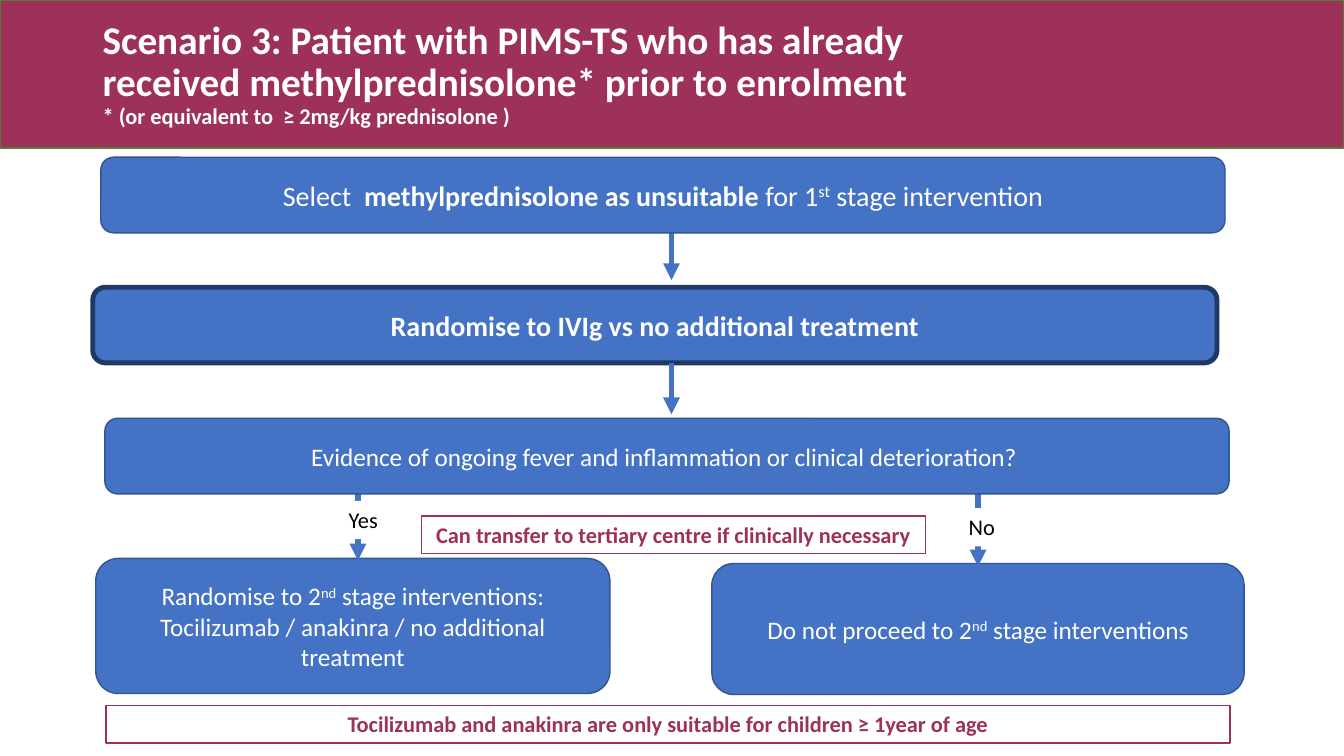
from pptx import Presentation
from pptx.dml.color import RGBColor
from pptx.enum.shapes import MSO_CONNECTOR, MSO_SHAPE
from pptx.enum.text import MSO_ANCHOR, PP_ALIGN
from pptx.oxml.ns import qn
from pptx.util import Inches, Pt
from lxml import etree

RECT, ROUNDED = MSO_SHAPE.RECTANGLE, MSO_SHAPE.ROUNDED_RECTANGLE
STRAIGHT = MSO_CONNECTOR.STRAIGHT
TOP, MIDDLE = MSO_ANCHOR.TOP, MSO_ANCHOR.MIDDLE
LEFT, CENTER = PP_ALIGN.LEFT, PP_ALIGN.CENTER

WHITE = RGBColor(0xFF, 0xFF, 0xFF)
BLACK = RGBColor(0x00, 0x00, 0x00)
PLUM = RGBColor(0x9E, 0x31, 0x59)
GREEN = RGBColor(0x53, 0x80, 0x35)
BLUE = RGBColor(0x44, 0x72, 0xC4)
EDGE = RGBColor(0x32, 0x54, 0x91)
NAVY = RGBColor(0x20, 0x38, 0x64)

BOLD = {"bold": True}
STEP_WIDTH, STEP_HEIGHT = 11.15, 0.75
NOTE_HEIGHT = 0.37


class Flowchart:
    """Draws the elements of a treatment flowchart in one style."""

    font_name = "Calibri"

    def __init__(self, slide):
        self.slide = slide

    def set_text(self, frame, paragraphs, size, color, align, anchor):
        frame.word_wrap = True
        frame.vertical_anchor = anchor
        for index, runs in enumerate(paragraphs):
            paragraph = frame.paragraphs[0] if index == 0 else frame.add_paragraph()
            paragraph.alignment = align
            for text, changes in runs:
                self.add_run(paragraph, text, size, color, changes)

    def add_run(self, paragraph, text, size, color, changes):
        run = paragraph.add_run()
        run.text = text
        run.font.color.rgb = color
        formats = {"name": self.font_name, "size": Pt(size), "bold": False}
        formats.update(changes)
        raised = formats.pop("raised", False)
        for attribute, value in formats.items():
            setattr(run.font, attribute, value)
        if raised:
            run._r.get_or_add_rPr().set("baseline", "30000")

    def panel(self, preset, place, fill=None, line=None, weight=1):
        shape = self.slide.shapes.add_shape(preset, *map(Inches, place))
        shape.shadow.inherit = False
        if fill is None:
            shape.fill.background()
        else:
            shape.fill.solid()
            shape.fill.fore_color.rgb = fill
        if line is None:
            shape.line.fill.background()
        else:
            shape.line.color.rgb = line
            shape.line.width = Pt(weight)
        return shape

    def heading(self, place, title, footnote):
        frame = self.slide.shapes.add_textbox(*map(Inches, place)).text_frame
        self.set_text(frame, [[(title, BOLD)]], 28, WHITE, LEFT, MIDDLE)
        paragraph = frame.paragraphs[0]
        paragraph.line_spacing = 0.9
        paragraph.add_line_break()
        self.add_run(paragraph, footnote, 16, WHITE, BOLD)

    def step(self, place, paragraphs, size=18, line=EDGE, weight=1):
        box = self.panel(ROUNDED, place, BLUE, line, weight)
        self.set_text(box.text_frame, paragraphs, size, WHITE, CENTER, MIDDLE)

    def note(self, place, text):
        box = self.panel(RECT, place, line=PLUM)
        self.set_text(box.text_frame, [[(text, BOLD)]], 16, PLUM, CENTER, TOP)

    def answer(self, left, top, text):
        box = self.panel(RECT, (left, top, 0.67, 0.38), WHITE)
        self.set_text(box.text_frame, [[(text, {})]], 16, BLACK, LEFT, TOP)

    def arrow(self, x, top, bottom):
        link = self.slide.shapes.add_connector(
            STRAIGHT, Inches(x), Inches(top), Inches(x), Inches(bottom))
        link.line.color.rgb = BLUE
        link.line.width = Pt(4)
        properties = link._element.spPr
        etree.SubElement(properties.find(qn("a:ln")), qn("a:tailEnd"), type="triangle")
        etree.SubElement(properties, qn("a:effectLst"))


def main():
    presentation = Presentation()
    presentation.slide_width = Inches(13.33)
    presentation.slide_height = Inches(7.5)
    chart = Flowchart(presentation.slides.add_slide(presentation.slide_layouts[6]))

    chart.panel(RECT, (0, 0, 13.33, 1.47), PLUM, GREEN)
    chart.heading(
        (0.92, 0.02, 8.96, 1.45),
        "Scenario 3: Patient with PIMS-TS who has already received "
        "methylprednisolone* prior to enrolment ",
        "* (or equivalent to  ≥ 2mg/kg prednisolone )")

    chart.arrow(6.66, 2.27, 2.78)
    chart.step((1, 1.56, STEP_WIDTH, STEP_HEIGHT), [[
        ("Select  ", {}), ("methylprednisolone as unsuitable ", BOLD),
        ("for 1", {}), ("st", {"raised": True}), (" stage intervention", {})]], 20)
    chart.step((0.92, 2.85, STEP_WIDTH, STEP_HEIGHT),
               [[("Randomise to IVIg vs no additional treatment", BOLD)]],
               20, NAVY, 3.5)
    chart.arrow(6.66, 3.6, 4.11)

    second = ("nd", {"raised": True})
    chart.step((0.95, 5.54, 5.1, 1.34), [
        [("Randomise to 2", {}), second, (" stage interventions:", {})],
        [("Tocilizumab / anakinra / no additional treatment", {})]])
    chart.step((7.06, 5.59, 5.28, 1.3), [
        [("Do not proceed to 2", {}), second, (" stage interventions", {})]])

    for x, top, bottom, answer_top, answer in (
            (3.55, 4.78, 5.56, 4.97, "Yes"), (9.7, 4.83, 5.62, 5.04, "No")):
        chart.arrow(x, top, bottom)
        chart.answer(x - 0.19, answer_top, answer)

    chart.step((1.04, 4.15, STEP_WIDTH, STEP_HEIGHT), [[
        ("Evidence of ongoing fever and inflammation or clinical deterioration? ", {})]])
    chart.note((4.18, 5.12, 5, NOTE_HEIGHT),
               "Can transfer to tertiary centre if clinically necessary")
    chart.note((1.05, 7, STEP_WIDTH, NOTE_HEIGHT),
               "Tocilizumab and anakinra are only suitable for children ≥ 1year of age")

    presentation.save("out.pptx")


if __name__ == "__main__":
    main()
